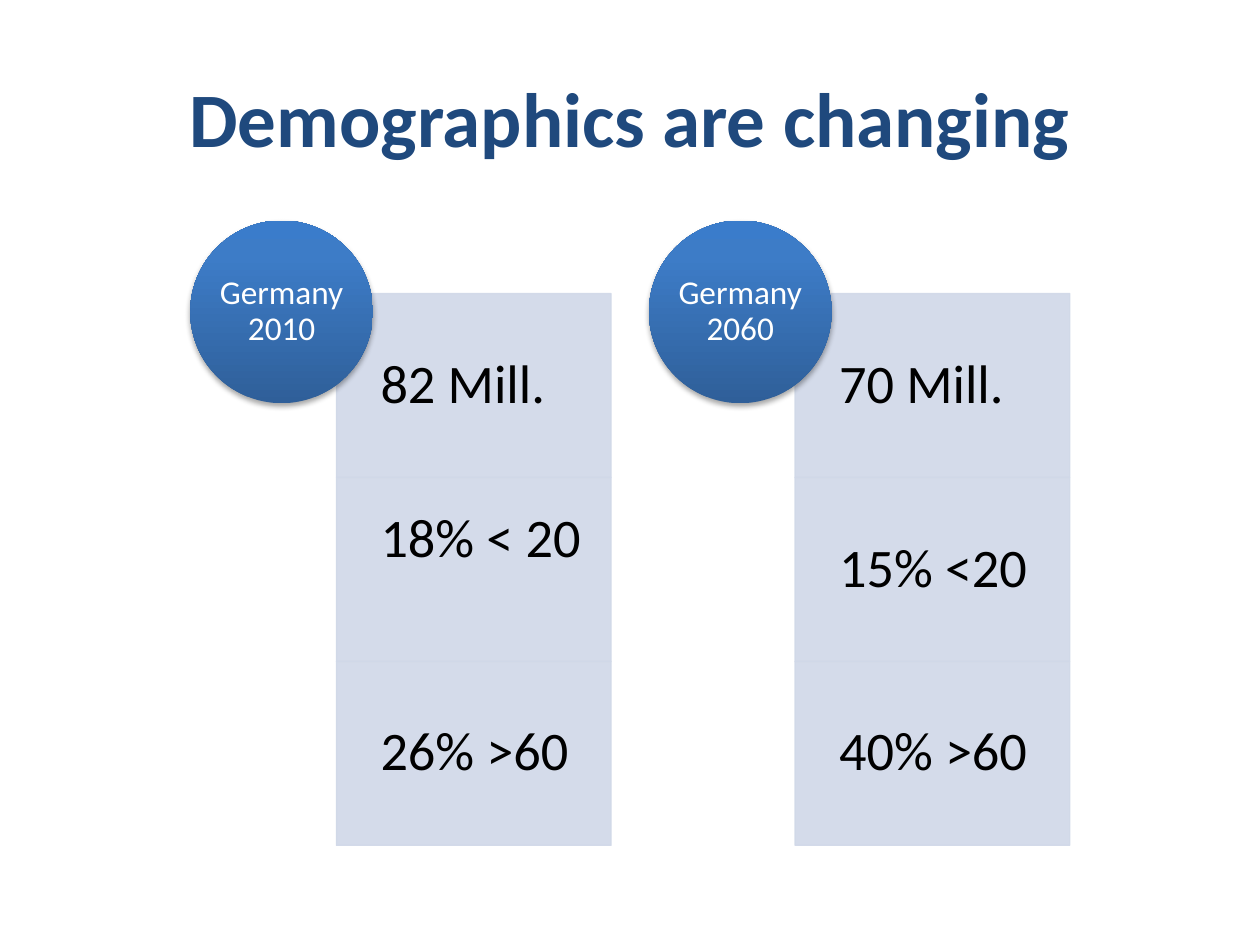
from copy import deepcopy
from lxml.etree import SubElement
from pptx import Presentation
from pptx.dml.color import RGBColor
from pptx.enum.shapes import MSO_SHAPE as Shape
from pptx.enum.text import MSO_ANCHOR as Anchor, PP_ALIGN as Align
from pptx.oxml.ns import qn
from pptx.util import Inches, Pt

COLORS = {
    "title": "1F497D",
    "panel": "D0D8E8",
    "value": "000000",
    "badge_text": "FFFFFF",
    "shadow": "000000",
}
BADGE_STOPS = [(0, "2F5F99"), (0.8, "3D7CC7"), (1, "3A7CCB")]
COUNTRY_YEARS = [
    ("Germany 2010", ["82 Mill.", "18% < 20", "26% >60"]),
    ("Germany 2060", ["70 Mill.", "15% <20", "40% >60"]),
]
RAISED_VALUE = "18% < 20"
LINE_HEIGHT = 0.47
BADGE_LEFT, BADGE_TOP, BADGE_SIZE = 1.51, 1.75, 1.45
COLUMN_STEP = 3.64
PANEL_OFFSET, PANEL_TOP = 1.16, 2.33
PANEL_WIDTH, PANEL_HEIGHT = 2.18, 1.46


class SlideBuilder:
    font_name = "Calibri"

    def __init__(self, slide):
        self.slide = slide

    def add_label(self, shape, text, size, color, align, insets, bold=False, spacing=1):
        frame = shape.text_frame
        frame.word_wrap = True
        frame.vertical_anchor = Anchor.MIDDLE
        (frame.margin_left, frame.margin_top,
         frame.margin_right, frame.margin_bottom) = [Inches(inset) for inset in insets]
        frame.text = text
        paragraph = frame.paragraphs[0]
        paragraph.alignment = align
        paragraph.line_spacing = spacing
        font = paragraph.runs[0].font
        font.name, font.size, font.bold = self.font_name, Pt(size), bold
        font.color.rgb = RGBColor.from_string(COLORS[color])

    def add_shape(self, preset, left, top, width, height):
        shape = self.slide.shapes.add_shape(
            preset, Inches(left), Inches(top), Inches(width), Inches(height))
        shape.shadow.inherit = False
        return shape

    def title(self, text):
        heading = self.slide.shapes.add_textbox(
            Inches(0.5), Inches(0.3), Inches(9), Inches(1.25))
        self.add_label(heading, text, 44, "title", Align.CENTER,
                       (0.1, 0.05, 0.1, 0.05), bold=True)

    def panel(self, text, left, top, raise_by=0):
        panel = self.add_shape(Shape.RECTANGLE, left, top, PANEL_WIDTH, PANEL_HEIGHT)
        panel.line.width = Pt(0.75)
        for fill in (panel.fill, panel.line.fill):
            fill.solid()
            fill.fore_color.rgb = RGBColor.from_string(COLORS["panel"])
        for color in panel._element.spPr.iter(qn("a:srgbClr")):
            SubElement(color, qn("a:alpha"), val="90000")
        self.add_label(panel, text, 31, "value", Align.LEFT,
                       (0.35, 0.24, 0.24, 0.24 + raise_by), spacing=0.9)

    def badge(self, text, left, top):
        badge = self.add_shape(Shape.OVAL, left, top, BADGE_SIZE, BADGE_SIZE)
        badge.line.fill.background()
        badge.fill.gradient()
        badge.fill.gradient_angle = 90
        properties = badge._element.spPr
        stop_list = properties.find(".//" + qn("a:gsLst"))
        stop_list.append(deepcopy(stop_list[0]))
        for stop, (position, color) in zip(badge.fill.gradient_stops, BADGE_STOPS):
            stop.position = position
            stop.color.rgb = RGBColor.from_string(color)
        shadow = SubElement(
            properties.find(qn("a:effectLst")), qn("a:outerShdw"),
            blurRad=str(Pt(3.1)), dist=str(Pt(1.8)), dir="5400000", rotWithShape="0")
        shade = SubElement(shadow, qn("a:srgbClr"), val=COLORS["shadow"])
        SubElement(shade, qn("a:alpha"), val="35000")
        self.add_label(badge, text, 19, "badge_text", Align.CENTER,
                       (0, 0, 0, 0), spacing=0.9)


def main():
    deck = Presentation()
    deck.slide_width, deck.slide_height = Inches(10), Inches(7.5)
    builder = SlideBuilder(deck.slides.add_slide(deck.slide_layouts[6]))
    builder.title("Demographics are changing")
    for column, (country_year, values) in enumerate(COUNTRY_YEARS):
        left = BADGE_LEFT + column * COLUMN_STEP
        for row, value in enumerate(values):
            builder.panel(value, left + PANEL_OFFSET, PANEL_TOP + row * PANEL_HEIGHT,
                          LINE_HEIGHT if value == RAISED_VALUE else 0)
        builder.badge(country_year, left, BADGE_TOP)
    deck.save("out.pptx")


if __name__ == "__main__":
    main()
